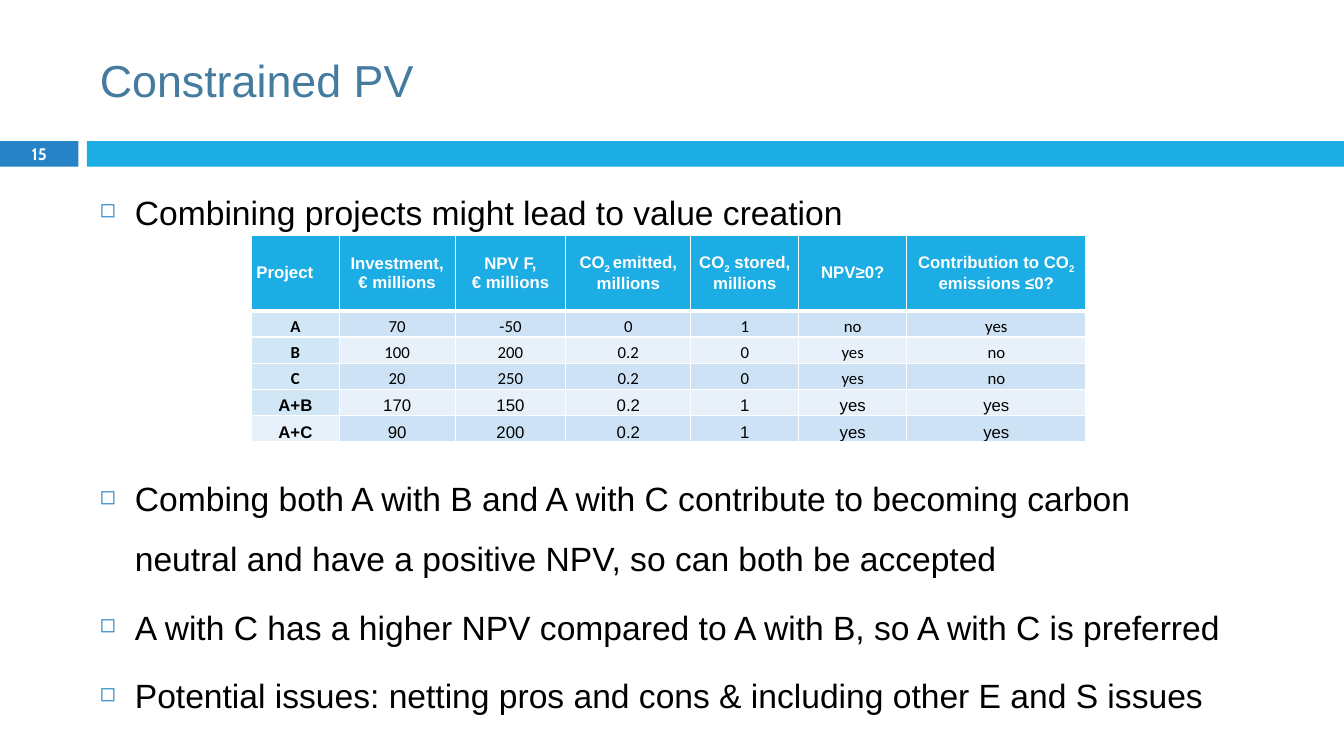
import pptx
import pptx.util
import pptx.dml.color
import pptx.enum.shapes
import pptx.enum.text
import pptx.oxml
import pptx.oxml.ns

Cm, Pt = pptx.util.Cm, pptx.util.Pt
ALIGN, ANCHOR = pptx.enum.text.PP_ALIGN, pptx.enum.text.MSO_ANCHOR

# Content: underscores enclose subscripts, \n breaks a line
TITLE = "Constrained PV"
PAGE = "15"
# (text, space before in points); the second bullet clears the table
BULLETS = [
    ("Combining projects might lead to value creation", 0),
    ("Combing both A with B and A with C contribute to becoming carbon "
     "neutral and have a positive NPV, so can both be accepted", 162),
    ("A with C has a higher NPV compared to A with B, so A with C is preferred", 6.5),
    ("Potential issues: netting pros and cons & including other E and S issues", 6.5),
]
HEADERS = ["Project", "Investment,\n€ millions", "NPV F,\n€ millions",
           "CO_2 _emitted, millions", "CO_2_ stored, millions", "NPV≥0?",
           "Contribution to CO_2_ emissions ≤0?"]
PROJECTS = [
    ["A", "70", "-50", "0", "1", "no", "yes"],
    ["B", "100", "200", "0.2", "0", "yes", "no"],
    ["C", "20", "250", "0.2", "0", "yes", "no"],
    ["A+B", "170", "150", "0.2", "1", "yes", "yes"],
    ["A+C", "90", "200", "0.2", "1", "yes", "yes"],
]
COLUMN_WIDTHS = [2.21, 2.92, 2.79, 3.15, 2.72, 2.72, 4.52]
HEADER_HEIGHT, ROW_HEIGHT = 1.9, 0.66
COLORS = {"title": "457B9E", "marker": "2683C6", "bar": "1CADE4",
          "white": "FFFFFF", "black": "000000", "dark band": "CDE3F5",
          "light band": "E8F1FA", "project": "D1E7F6", "last project": "E7F1FA"}


def rgb(name):
    return pptx.dml.color.RGBColor.from_string(COLORS[name])


def set_font(paragraph, name, size, color, bold=False):
    font = paragraph.font
    font.name, font.size, font.bold = name, Pt(size), bold
    font.color.rgb = rgb(color)


def add_xml(parent, xml):
    parent.append(pptx.oxml.parse_xml(
        xml.replace(" ", f" {pptx.oxml.ns.nsdecls('a')} ", 1)))


def add_band(left, width, color):
    band = slide.shapes.add_shape(pptx.enum.shapes.MSO_SHAPE.RECTANGLE,
                                  Cm(left), Cm(3.56), Cm(width), Cm(0.64))
    band.shadow.inherit = False
    band.fill.solid()
    band.fill.fore_color.rgb = rgb(color)
    band.line.fill.background()
    return band


def write_marked(paragraph, text):
    for number, line in enumerate(text.split("\n")):
        if number:
            paragraph.add_line_break()
        for position, piece in enumerate(line.split("_")):
            run = paragraph.add_run()
            run.text = piece
            if position % 2:
                run._r.get_or_add_rPr().set("baseline", "-25000")


def format_cell(cell, text, fill, name, color, bold, align, anchor, space, bottom):
    cell.margin_left = cell.margin_right = Cm(0.12)
    cell.margin_top = cell.margin_bottom = 0
    cell.vertical_anchor = anchor
    for side, width in (("L", 1), ("R", 1), ("T", 1), ("B", bottom)):
        add_xml(cell._tc.get_or_add_tcPr(),
                f'<a:ln{side} w="{Pt(width)}"><a:solidFill><a:srgbClr val="{COLORS["white"]}"/>'
                f'</a:solidFill></a:ln{side}>')
    cell.fill.solid()
    cell.fill.fore_color.rgb = rgb(fill)
    paragraph = cell.text_frame.paragraphs[0]
    paragraph.alignment = align
    paragraph.space_before = paragraph.space_after = Pt(space)
    set_font(paragraph, name, 12, color, bold)
    write_marked(paragraph, text)


presentation = pptx.Presentation()
presentation.slide_width, presentation.slide_height = Cm(33.87), Cm(19.05)
slide = presentation.slides.add_slide(presentation.slide_layouts[5])

# Title
title = slide.shapes.title
title.left, title.top, title.width, title.height = Cm(2.26), Cm(0.64), Cm(30.2), Cm(2.74)
title.text_frame.text = TITLE
title.text_frame.vertical_anchor = ANCHOR.MIDDLE
heading = title.text_frame.paragraphs[0]
heading.alignment = ALIGN.LEFT
set_font(heading, "Arial", 32, "title")

# Page marker and bar
marker = add_band(0, 1.98, "marker")
add_band(2.19, 31.68, "bar")
page_frame = marker.text_frame
page_frame.margin_top = page_frame.margin_bottom = 0
page_frame.vertical_anchor = ANCHOR.MIDDLE
page_frame.text = PAGE
page_frame.paragraphs[0].alignment = ALIGN.CENTER
set_font(page_frame.paragraphs[0], "Cabin", 11.9, "white", True)

# Bullets
points = slide.shapes.add_textbox(Cm(2.26), Cm(4.22), Cm(28.85), Cm(13.69)).text_frame
points.word_wrap = True
for index, (text, space) in enumerate(BULLETS):
    point = points.add_paragraph() if index else points.paragraphs[0]
    point.text = text
    point.line_spacing = 1.48
    point.space_before = Pt(space)
    properties = point._p.get_or_add_pPr()
    properties.set("marL", str(Cm(0.89)))
    properties.set("indent", str(-Cm(0.89)))
    add_xml(properties, f'<a:buClr ><a:srgbClr val="{COLORS["marker"]}"/></a:buClr>')
    add_xml(properties, '<a:buSzPct val="60000"/>')
    add_xml(properties, '<a:buChar char="◻"/>')
    set_font(point, "Arial", 24, "black")

# Project table
row_heights = [HEADER_HEIGHT] + [ROW_HEIGHT] * len(PROJECTS)
projects = slide.shapes.add_table(
    len(row_heights), len(HEADERS), Cm(6.34), Cm(5.93),
    Cm(sum(COLUMN_WIDTHS)), Cm(sum(row_heights))).table
for column, width in zip(projects.columns, COLUMN_WIDTHS):
    column.width = Cm(width)
for row, height in zip(projects.rows, row_heights):
    row.height = Cm(height)
for c, text in enumerate(HEADERS):
    format_cell(projects.cell(0, c), text, "bar", "Arial", "white", True,
                ALIGN.CENTER if c else ALIGN.LEFT, ANCHOR.MIDDLE, 2, 3)
for r, values in enumerate(PROJECTS, 1):
    combined = "+" in values[0]
    band = "dark band" if r % 2 else "light band"
    project = "last project" if r == len(PROJECTS) else "project"
    for c, text in enumerate(values):
        format_cell(projects.cell(r, c), text, band if c else project,
                    "Arial" if combined else "Calibri", "black", c == 0,
                    ALIGN.CENTER, ANCHOR.BOTTOM, 3 if combined else 2, 1)

presentation.save("out.pptx")
